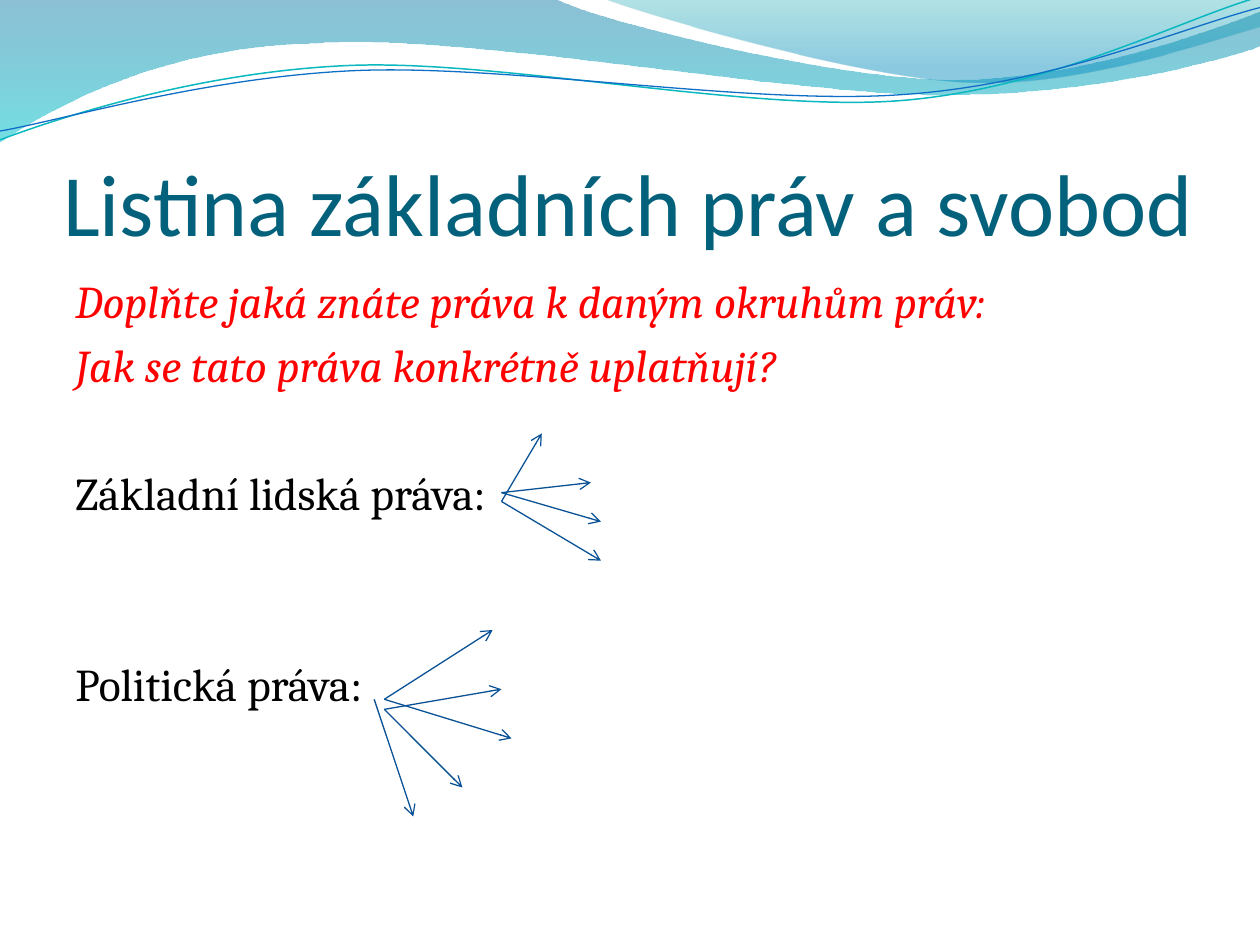
from dataclasses import dataclass
from math import cos, radians, sin
from typing import Optional

from lxml import etree
from pptx import Presentation
from pptx.dml.color import RGBColor
from pptx.enum.shapes import MSO_CONNECTOR
from pptx.enum.text import MSO_ANCHOR, MSO_AUTO_SIZE, PP_ALIGN
from pptx.oxml.ns import qn
from pptx.util import Inches, Pt

STRAIGHT = MSO_CONNECTOR.STRAIGHT
BOTTOM = MSO_ANCHOR.BOTTOM
NO_AUTOFIT = MSO_AUTO_SIZE.NONE
LEFT = PP_ALIGN.LEFT

COLORS = {
    "title": "04617B",
    "question": "FF0000",
    "topic": "000000",
    "arrow": "095295",
    "teal_line": "0AB8BF",
    "blue_line": "0F6FC6",
    "wave_top": "0074A1",
    "wave_bottom": "00C6CF",
    "crest_top": "00A1A9",
    "crest_bottom": "008BBF",
}
TITLE_ONLY_LAYOUT = 5
LINE_TILT = -2.7
TILT_CENTER = (4.99, 0.58)

Point = tuple[float, float]


@dataclass
class GradientStop:
    position: float
    color: str
    opacity: int


@dataclass
class Wave:
    start: Point
    segments: list[tuple[float, ...]]
    stops: tuple[GradientStop, ...] = ()
    line_color: Optional[str] = None
    line_width: float = 0
    tilt: float = 0


@dataclass
class Line:
    text: str
    color: str
    italic: bool
    space_before: float


@dataclass
class Arrow:
    start: Point
    end: Point


WAVES = [
    Wave((0, 0), [
        (4.4, -0.01),
        (4.76, 0.17, 6.64, 0.63, 7.58, 0.63),
        (8.53, 0.63, 9.58, 0.26, 10, 0.09),
        (10.01, 0.36),
        (9.83, 0.44, 8.7, 0.76, 7.46, 0.75),
        (6.22, 0.75, 3.82, 0.28, 2.57, 0.34),
        (1.29, 0.36, 0.46, 0.83, -0.01, 1.13),
    ], stops=(GradientStop(0, "wave_top", 45), GradientStop(1, "wave_bottom", 55))),
    Wave((4.79, -0.01), [
        (5.09, 0.11, 6.82, 0.62, 7.69, 0.65),
        (8.56, 0.69, 9.61, 0.32, 10, 0.21),
        (10, 0),
    ], stops=(GradientStop(0, "crest_top", 30), GradientStop(0.8, "crest_bottom", 45))),
    Wave((0, 1.11), [
        (0.48, 0.93, 1.58, 0.57, 2.77, 0.52),
        (3.95, 0.47, 5.93, 0.89, 7.13, 0.8),
        (8.33, 0.71, 9.38, 0.15, 9.98, -0.02),
    ], line_color="teal_line", line_width=0.85, tilt=LINE_TILT),
    Wave((0, 1.04), [
        (0.47, 0.96, 1.64, 0.61, 2.83, 0.56),
        (4.03, 0.51, 5.97, 0.84, 7.17, 0.75),
        (8.36, 0.67, 9.41, 0.21, 10, 0.06),
    ], line_color="blue_line", line_width=0.75, tilt=LINE_TILT),
]

LINES = [
    Line("Doplňte jaká znáte práva k daným okruhům práv:", "question", True, 0),
    Line("Jak se tato práva konkrétně uplatňují?", "question", True, 5.5),
    Line("Základní lidská práva:", "topic", False, 41.5),
    Line("Politická práva:", "topic", False, 78),
]

HUMAN_RIGHTS_ARROWS = [
    Arrow((3.98, 3.98), (4.3, 3.44)),
    Arrow((3.98, 3.91), (4.69, 3.83)),
    Arrow((3.98, 3.91), (4.77, 4.14)),
    Arrow((3.98, 3.98), (4.77, 4.45)),
]
POLITICAL_RIGHTS_ARROWS = [
    Arrow((3.05, 5.55), (3.91, 5)),
    Arrow((3.05, 5.63), (3.98, 5.47)),
    Arrow((3.05, 5.55), (4.06, 5.86)),
    Arrow((3.05, 5.63), (3.67, 6.25)),
    Arrow((2.97, 5.55), (3.28, 6.48)),
]


def rgb(name: str) -> RGBColor:
    return RGBColor.from_string(COLORS[name])


def level_points(values: tuple[float, ...], tilt: float) -> list[tuple[int, int]]:
    angle = radians(-tilt)
    center_x, center_y = TILT_CENTER
    points = []
    for x, y in zip(values[::2], values[1::2]):
        dx, dy = x - center_x, y - center_y
        points.append((
            Inches(center_x + dx * cos(angle) - dy * sin(angle)),
            Inches(center_y + dx * sin(angle) + dy * cos(angle)),
        ))
    return points


def bend_edges(shape, segments: list[list[tuple[int, int]]]) -> None:
    edges = list(shape._element.iter(qn("a:lnTo")))
    for edge, points in zip(edges, segments):
        if len(points) == 1:
            continue
        curve = etree.Element(qn("a:cubicBezTo"))
        for x, y in points:
            etree.SubElement(curve, qn("a:pt"), x=str(x - shape.left), y=str(y - shape.top))
        edge.getparent().replace(edge, curve)


def draw_wave(slide, wave: Wave) -> None:
    start = level_points(wave.start, wave.tilt)[0]
    segments = [level_points(segment, wave.tilt) for segment in wave.segments]
    builder = slide.shapes.build_freeform(*start)
    builder.add_line_segments([points[-1] for points in segments], close=bool(wave.stops))
    shape = builder.convert_to_shape()
    bend_edges(shape, segments)
    shape.rotation = wave.tilt
    shape.shadow.inherit = False
    if wave.line_color:
        shape.fill.background()
        shape.line.color.rgb = rgb(wave.line_color)
        shape.line.width = Pt(wave.line_width)
        return
    shape.line.fill.background()
    shape.fill.gradient()
    shape.fill.gradient_angle = 270
    for gradient_stop, stop in zip(shape.fill.gradient_stops, wave.stops):
        gradient_stop.position = stop.position
        gradient_stop.color.rgb = rgb(stop.color)
    stop_colors = shape._element.spPr.findall(".//" + qn("a:gs") + "/" + qn("a:srgbClr"))
    for stop_color, stop in zip(stop_colors, wave.stops):
        etree.SubElement(stop_color, qn("a:alpha"), val=str(stop.opacity * 1000))


def draw_arrow(slide, arrow: Arrow) -> None:
    ends = [Inches(value) for value in arrow.start + arrow.end]
    connector = slide.shapes.add_connector(STRAIGHT, *ends)
    connector.line.color.rgb = rgb("arrow")
    connector.line.width = Pt(0.75)
    properties = connector._element.spPr
    etree.SubElement(properties.find(qn("a:ln")), qn("a:tailEnd"), type="arrow")
    etree.SubElement(properties, qn("a:effectLst"))


def add_run(paragraph, text: str, font: str, size: float, color: str, italic: bool = False) -> None:
    run = paragraph.add_run()
    run.text = text
    run.font.name = font
    run.font.size = Pt(size)
    run.font.italic = italic
    run.font.color.rgb = rgb(color)


def write_title(slide) -> None:
    title = slide.shapes.title
    title.left, title.top, title.width, title.height = map(Inches, (0.5, 0.77, 9, 1.25))
    frame = title.text_frame
    frame.auto_size = NO_AUTOFIT
    frame.vertical_anchor = BOTTOM
    frame.margin_left = frame.margin_right = frame.margin_bottom = 0
    frame.margin_top = Inches(0.05)
    heading = frame.paragraphs[0]
    heading.alignment = LEFT
    add_run(heading, "Listina základních práv a svobod", "Calibri", 50, "title")


def write_lines(slide, lines: list[Line]) -> None:
    frame = slide.shapes.add_textbox(*map(Inches, (0.5, 2.12, 9, 4.8))).text_frame
    frame.word_wrap = True
    for index, line in enumerate(lines):
        paragraph = frame.add_paragraph() if index else frame.paragraphs[0]
        paragraph.space_before = Pt(line.space_before)
        add_run(paragraph, line.text, "Cambria", 26, line.color, line.italic)


def main() -> None:
    presentation = Presentation()
    presentation.slide_width, presentation.slide_height = Inches(10), Inches(7.5)
    slide = presentation.slides.add_slide(presentation.slide_layouts[TITLE_ONLY_LAYOUT])
    for wave in WAVES:
        draw_wave(slide, wave)
    write_title(slide)
    write_lines(slide, LINES)
    for arrow in HUMAN_RIGHTS_ARROWS + POLITICAL_RIGHTS_ARROWS:
        draw_arrow(slide, arrow)
    presentation.save("out.pptx")


if __name__ == "__main__":
    main()
